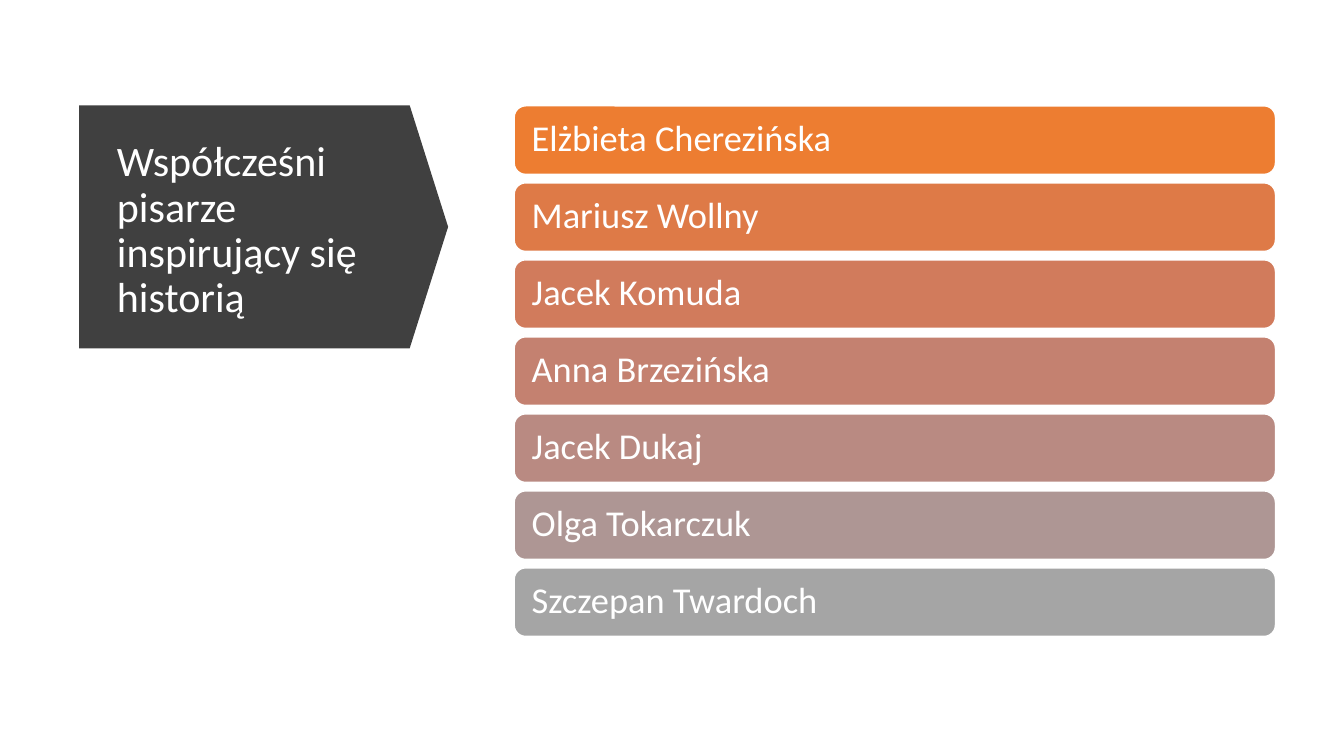
from pptx import Presentation
from pptx.dml.color import RGBColor
from pptx.enum.shapes import MSO_SHAPE
from pptx.enum.text import MSO_ANCHOR, MSO_AUTO_SIZE, PP_ALIGN
from pptx.util import Inches, Pt

DOWN_ARROW = MSO_SHAPE.DOWN_ARROW
ROUNDED = MSO_SHAPE.ROUNDED_RECTANGLE
MIDDLE = MSO_ANCHOR.MIDDLE
NO_FIT = MSO_AUTO_SIZE.NONE
LEFT = PP_ALIGN.LEFT

WHITE = RGBColor(0xFF, 0xFF, 0xFF)
CHARCOAL = RGBColor(0x40, 0x40, 0x40)
WRITERS = [
    ("Elżbieta Cherezińska", RGBColor(0xED, 0x7D, 0x31)),
    ("Mariusz Wollny", RGBColor(0xDE, 0x7A, 0x47)),
    ("Jacek Komuda", RGBColor(0xD1, 0x7B, 0x5C)),
    ("Anna Brzezińska", RGBColor(0xC4, 0x81, 0x70)),
    ("Jacek Dukaj", RGBColor(0xB9, 0x8A, 0x82)),
    ("Olga Tokarczuk", RGBColor(0xAE, 0x96, 0x94)),
    ("Szczepan Twardoch", RGBColor(0xA5, 0xA5, 0xA5)),
]
LIST_LEFT, LIST_TOP = 5.1, 1.05
BAR_WIDTH, BAR_HEIGHT, BAR_PITCH = 7.55, 0.68, 0.764


def write(shape, text, size):
    frame = shape.text_frame
    frame.word_wrap = True
    frame.auto_size = NO_FIT
    frame.vertical_anchor = MIDDLE
    paragraph = frame.paragraphs[0]
    paragraph.alignment = LEFT
    paragraph.line_spacing = 0.9
    run = paragraph.add_run()
    run.text = text
    run.font.name = "Calibri"
    run.font.size = Pt(size)
    run.font.color.rgb = WHITE


prs = Presentation()
prs.slide_width = Inches(13.33)
prs.slide_height = Inches(7.5)
slide = prs.slides.add_slide(prs.slide_layouts[5])

heading = slide.shapes.title
heading.left, heading.top = Inches(1.06), Inches(1.32)
heading.width, heading.height = Inches(2.92), Inches(1.95)
write(heading, "Współcześni pisarze inspirujący się historią", 30)

pointer = slide.shapes.add_shape(
    DOWN_ARROW, Inches(1.41), Inches(0.42), Inches(2.41), Inches(3.66))
pointer.rotation = 270
pointer.adjustments[0] = 1
pointer.adjustments[1] = 0.158
pointer.shadow.inherit = False
pointer.fill.solid()
pointer.fill.fore_color.rgb = CHARCOAL
pointer.line.fill.background()
heading._element.addprevious(pointer._element)

for row, (writer, color) in enumerate(WRITERS):
    bar = slide.shapes.add_shape(
        ROUNDED, Inches(LIST_LEFT), Inches(LIST_TOP + row * BAR_PITCH),
        Inches(BAR_WIDTH), Inches(BAR_HEIGHT))
    bar.shadow.inherit = False
    bar.fill.solid()
    bar.fill.fore_color.rgb = color
    bar.line.color.rgb = WHITE
    bar.line.width = Pt(1)
    write(bar, writer, 26)
    bar.text_frame.margin_left = bar.text_frame.margin_right = Inches(0.14)

prs.save("out.pptx")
